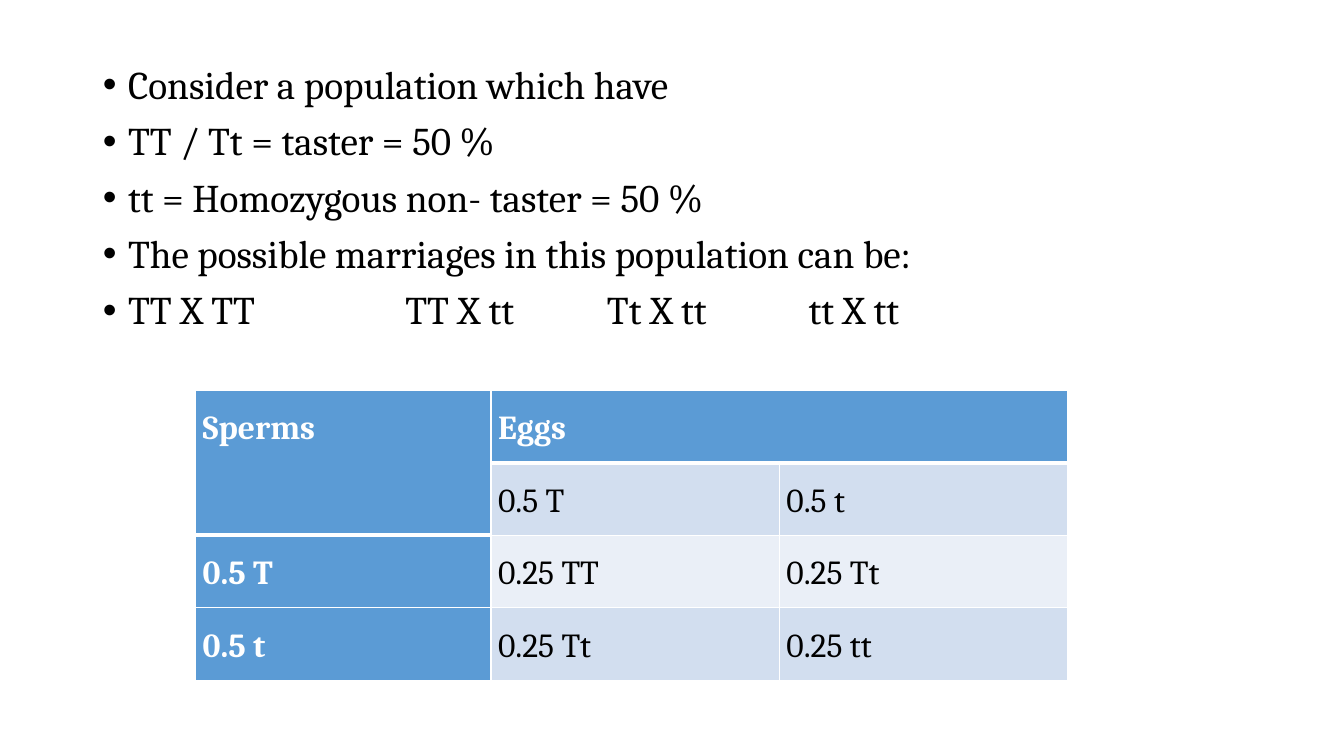
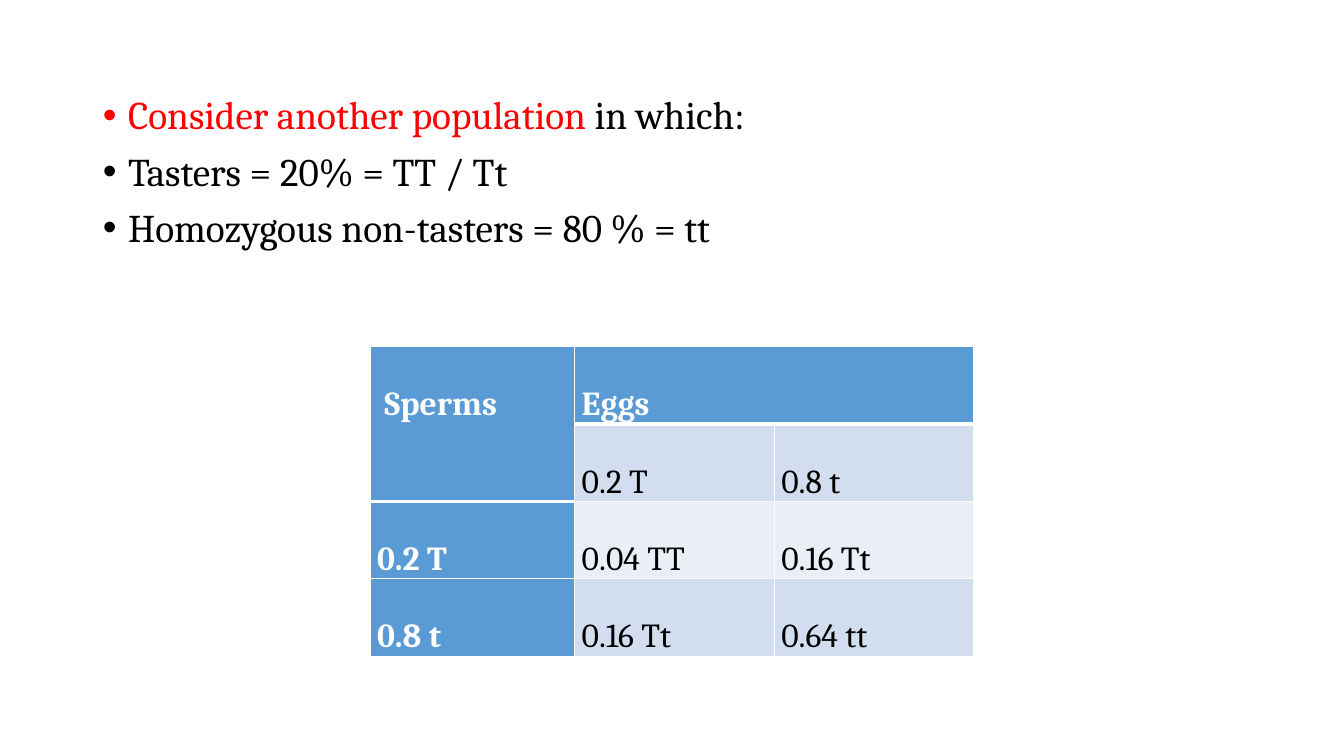
from lxml import etree
from pptx import Presentation
from pptx.dml.color import RGBColor
from pptx.enum.text import MSO_AUTO_SIZE, PP_ALIGN
from pptx.oxml.ns import qn
from pptx.util import Inches, Pt

JUSTIFY = PP_ALIGN.JUSTIFY
NO_AUTOFIT = MSO_AUTO_SIZE.NONE

FONT = "Cambria"
BLACK, WHITE, RED = "000000", "FFFFFF", "FF0000"
HEADER_BLUE, BAND_DARK, BAND_LIGHT = "5B9BD5", "D2DEEF", "EAEFF7"
HEADER_CELLS = {(0, 0), (0, 1), (0, 2), (1, 0)}
CROSS_TABS = (3, 5, 7)

# Each bullet is a list of (text, colour) runs
populations = [
    {
        "bullets": [
            [("Consider a population which have", BLACK)],
            [("TT / Tt = taster = 50 %", BLACK)],
            [("tt = Homozygous non- taster = 50 %", BLACK)],
            [("The possible marriages in this population can be:", BLACK)],
            [("TT X TT\tTT X tt\tTt X tt\ttt X tt", BLACK)],
        ],
        "bullets_top": 0.6,
        "crosses": [["Sperms", "Eggs", ""],
                    ["", "0.5 T", "0.5 t"],
                    ["0.5 T", "0.25 TT", "0.25 Tt"],
                    ["0.5 t", "0.25 Tt", "0.25 tt"]],
        "table_at": (1.94, 3.87),
        "columns": (2.93, 2.86, 2.86),
        "row_height": 0.72,
        "line_spacing": 1.5,
    },
    {
        "bullets": [
            [("Consider another population ", RED), ("in which:", BLACK)],
            [("Tasters = 20% = TT / Tt", BLACK)],
            [("Homozygous non-tasters = 80 % = tt", BLACK)],
        ],
        "bullets_top": 0.9,
        "crosses": [[" Sperms", "Eggs", ""],
                    ["", "0.2 T", "0.8 t"],
                    ["0.2 T", "0.04 TT", "0.16 Tt"],
                    ["0.8 t", "0.16 Tt", "0.64 tt"]],
        "table_at": (3.67, 3.44),
        "columns": (2.03, 1.98, 1.98),
        "row_height": 0.76,
        "line_spacing": 2.0,
    },
]


def rgb(value):
    return RGBColor.from_string(value)


def add_border(cell, position, tag, width):
    line = etree.Element(qn(tag), w=str(Pt(width)))
    fill = etree.SubElement(line, qn("a:solidFill"))
    etree.SubElement(fill, qn("a:srgbClr"), val=WHITE)
    cell._tc.get_or_add_tcPr().insert(position, line)


prs = Presentation()
prs.slide_width, prs.slide_height = Inches(13.33), Inches(7.5)

for population in populations:
    slide = prs.slides.add_slide(prs.slide_layouts[1])
    title = slide.shapes.title
    title._element.getparent().remove(title._element)

    # Bulleted description
    body = slide.placeholders[1]
    top = population["bullets_top"]
    body.left, body.top = Inches(0.92), Inches(top)
    body.width, body.height = Inches(11.5), Inches(6.76 - top)
    frame = body.text_frame
    frame.auto_size = NO_AUTOFIT
    for index, runs in enumerate(population["bullets"]):
        paragraph = frame.add_paragraph() if index else frame.paragraphs[0]
        paragraph.line_spacing = 0.9
        paragraph.space_before = Pt(10 if index else 0)
        props = paragraph._p.get_or_add_pPr()
        props.set("marL", str(Inches(0.25)))
        props.set("indent", str(Inches(-0.25)))
        etree.SubElement(props, qn("a:buFont"), typeface="Arial")
        etree.SubElement(props, qn("a:buChar"), char="•")
        if "\t" in runs[0][0]:
            stops = etree.SubElement(props, qn("a:tabLst"))
            for stop in CROSS_TABS:
                etree.SubElement(stops, qn("a:tab"), pos=str(Inches(stop)), algn="l")
        for text, colour in runs:
            run = paragraph.add_run()
            run.text = text
            run.font.name, run.font.size = FONT, Pt(28)
            run.font.color.rgb = rgb(colour)

    # Cross table of sperms and eggs
    left, top = population["table_at"]
    columns, crosses = population["columns"], population["crosses"]
    height = population["row_height"]
    table = slide.shapes.add_table(
        len(crosses), len(columns), Inches(left), Inches(top),
        Inches(sum(columns)), Inches(height * len(crosses))).table
    for column, width in zip(table.columns, columns):
        column.width = Inches(width)
    table.cell(0, 0).merge(table.cell(1, 0))
    table.cell(0, 1).merge(table.cell(0, 2))

    for r, row in enumerate(crosses):
        table.rows[r].height = Inches(height)
        for c, text in enumerate(row):
            cell = table.cell(r, c)
            heading = c == 0 or r == 0
            band = BAND_DARK if r % 2 else BAND_LIGHT
            cell.fill.solid()
            cell.fill.fore_color.rgb = rgb(HEADER_BLUE if heading else band)
            cell.margin_left = cell.margin_right = Inches(0.07)
            cell.margin_top = cell.margin_bottom = 0

            # Thick rule below the header cells, thin ones elsewhere
            above = 3 if (r - 1, c) in HEADER_CELLS else 1
            below = 3 if (r, c) in HEADER_CELLS else 1
            sides = (("a:lnL", 1), ("a:lnR", 1), ("a:lnT", above), ("a:lnB", below))
            for position, (tag, width) in enumerate(sides):
                add_border(cell, position, tag, width)

            if text:
                paragraph = cell.text_frame.paragraphs[0]
                paragraph.text = text
                paragraph.alignment = JUSTIFY
                paragraph.line_spacing = population["line_spacing"]
                font = paragraph.runs[0].font
                font.name, font.size, font.bold = FONT, Pt(24), heading
                font.color.rgb = rgb(WHITE if heading else BLACK)

prs.save("out.pptx")
